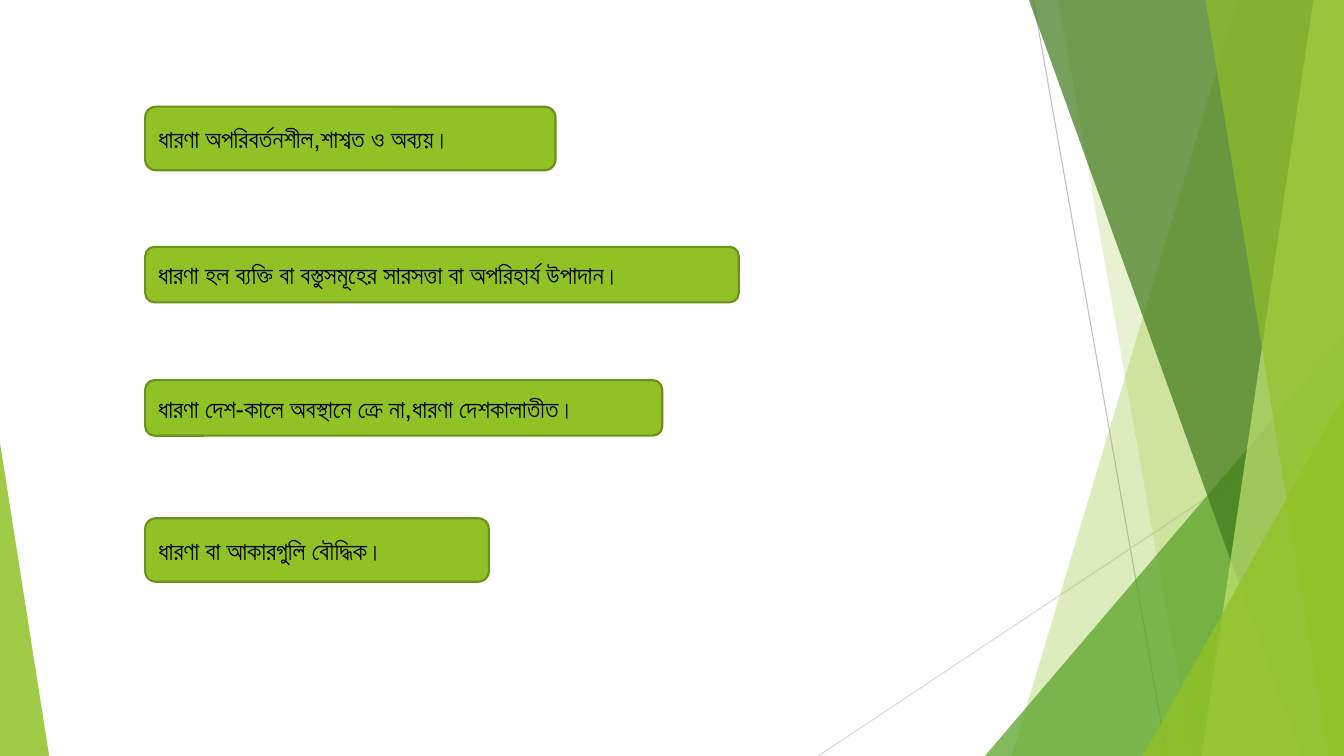
from dataclasses import dataclass

from lxml.etree import SubElement
from pptx import Presentation
from pptx.dml.color import RGBColor
from pptx.enum.shapes import MSO_CONNECTOR, MSO_SHAPE
from pptx.enum.text import MSO_ANCHOR, PP_ALIGN
from pptx.oxml.ns import qn
from pptx.util import Cm, Pt

WIDTH, HEIGHT = 33.87, 19.05


@dataclass(frozen=True)
class Theme:
    lime: str = "90C226"
    pale_lime: str = "C0E474"
    green: str = "54A021"
    forest: str = "3F7819"
    outline: str = "6B901C"
    gray: str = "BFBFBF"
    light_gray: str = "D9D9D9"
    text: str = "000000"
    font: str = "Arial"
    body_size: int = 18
    hairline: float = 0.75
    border: float = 1.5


def set_all(target, values):
    for name, value in values.items():
        setattr(target, name, value)


class SlideBuilder:
    def __init__(self, s, theme):
        self.s = s
        self.theme = theme

    def paint(self, sp, color, opacity=100):
        """Fill a shape without shadow or outline; opacity is in percent."""
        sp.shadow.inherit = False
        sp.fill.solid()
        sp.fill.fore_color.rgb = RGBColor.from_string(color)
        sp.line.fill.background()
        if opacity < 100:
            srgb = sp.fill._xPr.find(qn("a:solidFill")).find(qn("a:srgbClr"))
            SubElement(srgb, qn("a:alpha")).set("val", str(opacity * 1000))

    def line(self, x1, y1, x2, y2, color):
        c = self.s.shapes.add_connector(
            MSO_CONNECTOR.STRAIGHT, Cm(x1), Cm(y1), Cm(x2), Cm(y2))
        c.line.color.rgb = RGBColor.from_string(color)
        c.line.width = Pt(self.theme.hairline)
        SubElement(c._element.spPr, qn("a:effectLst"))

    def band(self, top_x, bottom_x, color, opacity):
        """Full-height panel from a slanted left side to the slide's right edge."""
        builder = self.s.shapes.build_freeform(Cm(top_x), 0)
        corners = [(WIDTH, 0), (WIDTH, HEIGHT), (bottom_x, HEIGHT)]
        builder.add_line_segments([(Cm(x), Cm(y)) for x, y in corners])
        self.paint(builder.convert_to_shape(), color, opacity)

    def corner(self, x, y, width, apex, color, opacity):
        """Triangle standing on the slide's bottom edge."""
        sp = self.s.shapes.add_shape(
            MSO_SHAPE.ISOSCELES_TRIANGLE, Cm(x), Cm(y), Cm(width), Cm(HEIGHT - y))
        sp.adjustments[0] = apex
        self.paint(sp, color, opacity)

    def statement(self, x, y, width, height, text):
        t = self.theme
        sp = self.s.shapes.add_shape(
            MSO_SHAPE.ROUNDED_RECTANGLE, Cm(x), Cm(y), Cm(width), Cm(height))
        self.paint(sp, t.lime)
        sp.line.color.rgb = RGBColor.from_string(t.outline)
        sp.line.width = Pt(t.border)
        tf = sp.text_frame
        set_all(tf, {"word_wrap": True, "vertical_anchor": MSO_ANCHOR.MIDDLE})
        p = tf.paragraphs[0]
        p.alignment = PP_ALIGN.LEFT
        r = p.add_run()
        r.text = text
        set_all(r.font, {"name": t.font, "size": Pt(t.body_size)})
        r.font.color.rgb = RGBColor.from_string(t.text)


def main():
    prs = Presentation()
    set_all(prs, {"slide_width": Cm(WIDTH), "slide_height": Cm(HEIGHT)})
    t = Theme()
    slide = SlideBuilder(prs.slides.add_slide(prs.slide_layouts[6]), t)

    slide.line(26.04, 0, 29.41, HEIGHT, t.gray)
    slide.line(WIDTH, 10.24, 20.62, HEIGHT, t.light_gray)
    slide.band(31.19, 25.5, t.lime, 30)
    slide.band(26.67, 30.05, t.lime, 20)
    slide.corner(24.82, 8.46, 9.05, 1, t.green, 72)
    slide.band(25.93, 32.79, t.forest, 70)
    slide.band(33.1, 30.28, t.pale_lime, 70)
    slide.band(30.38, 33.48, t.lime, 65)
    slide.corner(28.8, 9.98, 5.07, 1, t.lime, 80)
    slide.corner(0, 11.15, 1.24, 0, t.lime, 85)

    statements = [
        (2.69, 10.34, 1.6, "ধারণা অপরিবর্তনশীল,শাশ্বত ও অব্যয়।"),
        (6.22, 14.96, 1.4, "ধারণা হল ব্যক্তি বা বস্তুসমূহের সারসত্তা বা অপরিহার্য উপাদান।"),
        (9.58, 13.03, 1.4, "ধারণা দেশ-কালে অবস্থানে ক্রে না,ধারণা দেশকালাতীত।"),
        (13.06, 8.66, 1.6, "ধারণা বা আকারগুলি বৌদ্ধিক।"),
    ]
    for y, width, height, text in statements:
        slide.statement(3.66, y, width, height, text)

    prs.save("out.pptx")


if __name__ == "__main__":
    main()
